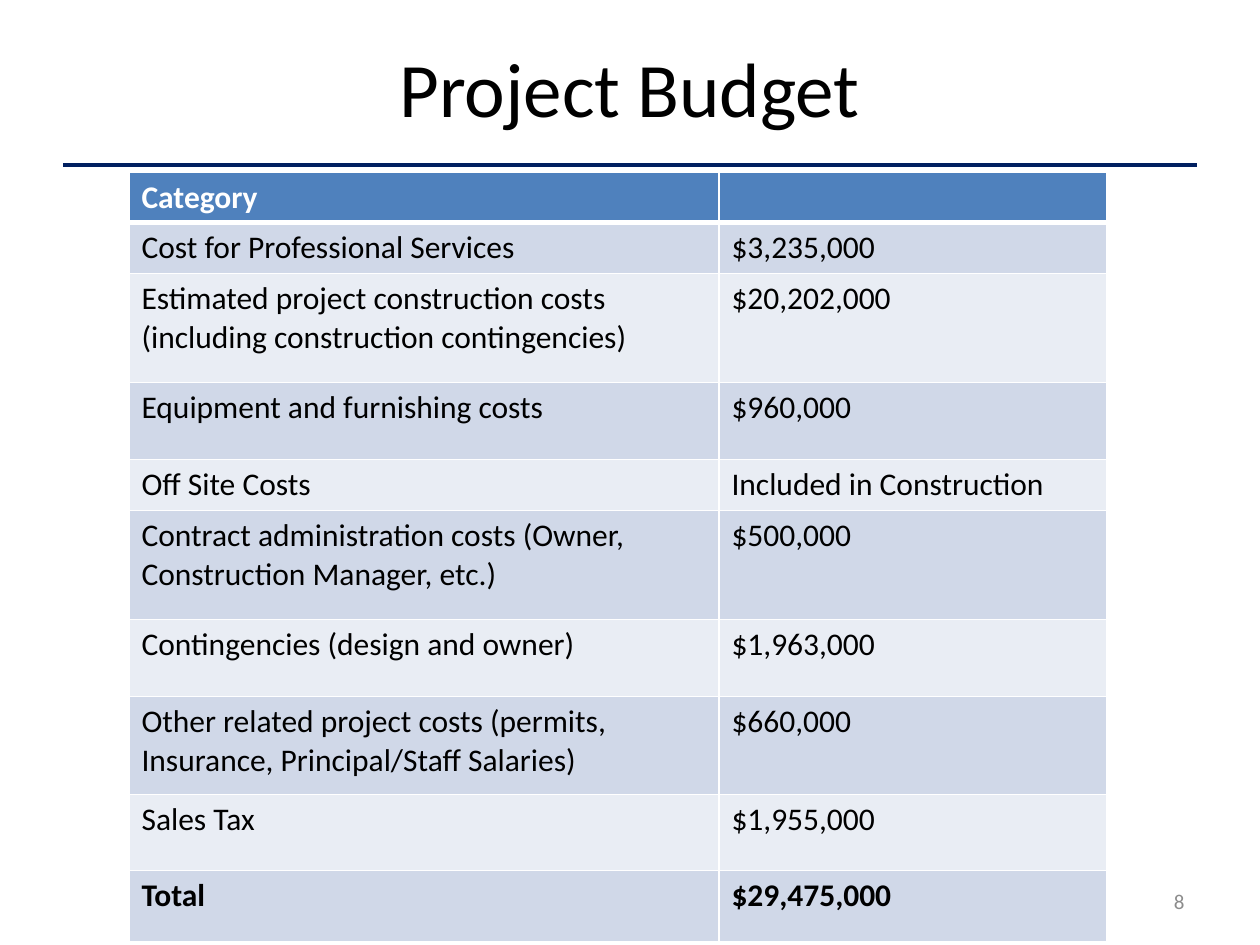
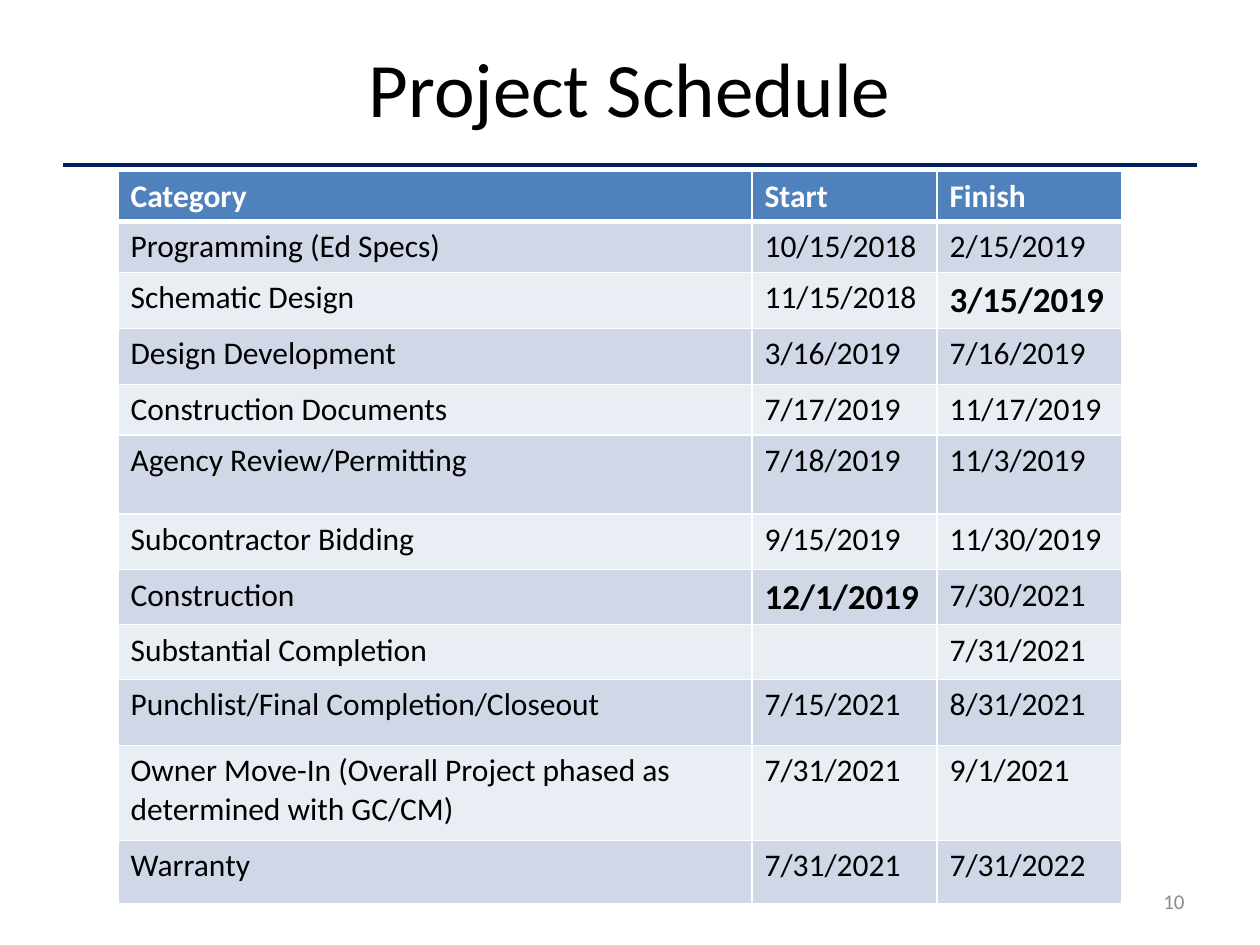
from lxml import etree
from pptx import Presentation
from pptx.dml.color import RGBColor
from pptx.enum.shapes import MSO_CONNECTOR
from pptx.enum.text import MSO_ANCHOR, PP_ALIGN
from pptx.oxml.ns import qn
from pptx.util import Pt

STRAIGHT = MSO_CONNECTOR.STRAIGHT
MIDDLE = MSO_ANCHOR.MIDDLE
CENTER, RIGHT = PP_ALIGN.CENTER, PP_ALIGN.RIGHT

EMU_PER_PX = 914400 / 126
FONT = "Calibri"
BODY_SIZE = 18
COLORS = {
    "text": "000000",
    "number": "8C8C8C",
    "rule": "002060",
    "header": "4F81BD",
    "header_text": "FFFFFF",
    "odd_row": "D0D8E8",
    "even_row": "E9EDF4",
    "border": "FFFFFF",
}

# Each row is its height in px followed by its cell texts.
# "bold" maps highlighted cell texts to their font size.
SLIDES = [
    {
        "title": "Project Budget",
        "number": "8",
        "origin": (129, 172),
        "columns": (590, 388),
        "bold": {"Total": 18, "$29,475,000": 18},
        "rows": [
            (50, "Category", ""),
            (51, "Cost for Professional Services", "$3,235,000"),
            (109, "Estimated project construction costs (including construction contingencies)", "$20,202,000"),
            (77, "Equipment and furnishing costs", "$960,000"),
            (51, "Off Site Costs", "Included in Construction"),
            (109, "Contract administration costs (Owner, Construction Manager, etc.)", "$500,000"),
            (77, "Contingencies (design and owner)", "$1,963,000"),
            (98, "Other related project costs (permits, Insurance, Principal/Staff Salaries)", "$660,000"),
            (76, "Sales Tax", "$1,955,000"),
            (71, "Total", "$29,475,000"),
        ],
    },
    {
        "title": "Project Schedule",
        "number": "10",
        "origin": (118, 171),
        "columns": (634, 185, 185),
        "bold": {"3/15/2019": 20, "12/1/2019": 20},
        "rows": [
            (50, "Category", "Start", "Finish"),
            (51, "Programming (Ed Specs)", "10/15/2018", "2/15/2019"),
            (56, "Schematic Design", "11/15/2018", "3/15/2019"),
            (56, "Design Development", "3/16/2019", "7/16/2019"),
            (50, "Construction Documents", "7/17/2019", "11/17/2019"),
            (79, "Agency Review/Permitting", "7/18/2019", "11/3/2019"),
            (56, "Subcontractor Bidding", "9/15/2019", "11/30/2019"),
            (55, "Construction", "12/1/2019", "7/30/2021"),
            (55, "Substantial Completion", "", "7/31/2021"),
            (66, "Punchlist/Final Completion/Closeout", "7/15/2021", "8/31/2021"),
            (95, "Owner Move-In (Overall Project phased as determined with GC/CM)", "7/31/2021", "9/1/2021"),
            (63, "Warranty", "7/31/2021", "7/31/2022"),
        ],
    },
]


def px(*lengths):
    """Convert px lengths to a list of EMU."""
    return [round(length * EMU_PER_PX) for length in lengths]


def style_text(paragraph, size, color, bold=False):
    font = paragraph.font
    font.name, font.size, font.bold = FONT, Pt(size), bold
    font.color.rgb = RGBColor.from_string(COLORS[color])


presentation = Presentation()
presentation.slide_width, presentation.slide_height = px(1260, 945)
blank_layout = presentation.slide_layouts[6]

for content in SLIDES:
    slide = presentation.slides.add_slide(blank_layout)

    for text, box, size, color, alignment in (
        (content["title"], (63, 8, 1134, 157), 44, "text", CENTER),
        (content["number"], (903, 876, 294, 50), 12, "number", RIGHT),
    ):
        frame = slide.shapes.add_textbox(*px(*box)).text_frame
        frame.word_wrap = True
        frame.vertical_anchor = MIDDLE
        paragraph = frame.paragraphs[0]
        paragraph.text = text
        paragraph.alignment = alignment
        style_text(paragraph, size, color)

    rule = slide.shapes.add_connector(STRAIGHT, *px(63, 165, 1197, 165))
    rule.line.color.rgb = RGBColor.from_string(COLORS["rule"])
    rule.line.width = Pt(2.75)
    etree.SubElement(rule._element.spPr, qn("a:effectLst"))

    rows, columns = content["rows"], content["columns"]
    table_size = (sum(columns), sum(row[0] for row in rows))
    table = slide.shapes.add_table(
        len(rows), len(columns), *px(*content["origin"], *table_size)
    ).table
    for column, width in zip(table.columns, px(*columns)):
        column.width = width

    for row_index, (height, *texts) in enumerate(rows):
        table.rows[row_index].height = px(height)[0]
        is_header = row_index == 0
        fill = "header" if is_header else ("even_row", "odd_row")[row_index % 2]

        for column_index, text in enumerate(texts):
            cell = table.cell(row_index, column_index)
            cell.fill.solid()
            cell.fill.fore_color.rgb = RGBColor.from_string(COLORS[fill])
            paragraph = cell.text_frame.paragraphs[0]
            paragraph.text = text
            style_text(
                paragraph,
                content["bold"].get(text, BODY_SIZE),
                "header_text" if is_header else "text",
                is_header or text in content["bold"],
            )

            border_widths = {
                "lnL": 1,
                "lnR": 1,
                "lnT": 3 if row_index == 1 else 1,
                "lnB": 3 if is_header else 1,
            }
            properties = cell._tc.get_or_add_tcPr()
            for position, (side, width) in enumerate(border_widths.items()):
                border = etree.Element(qn(f"a:{side}"), w=str(Pt(width)))
                solid = etree.SubElement(border, qn("a:solidFill"))
                etree.SubElement(solid, qn("a:srgbClr"), val=COLORS["border"])
                properties.insert(position, border)

presentation.save("out.pptx")
